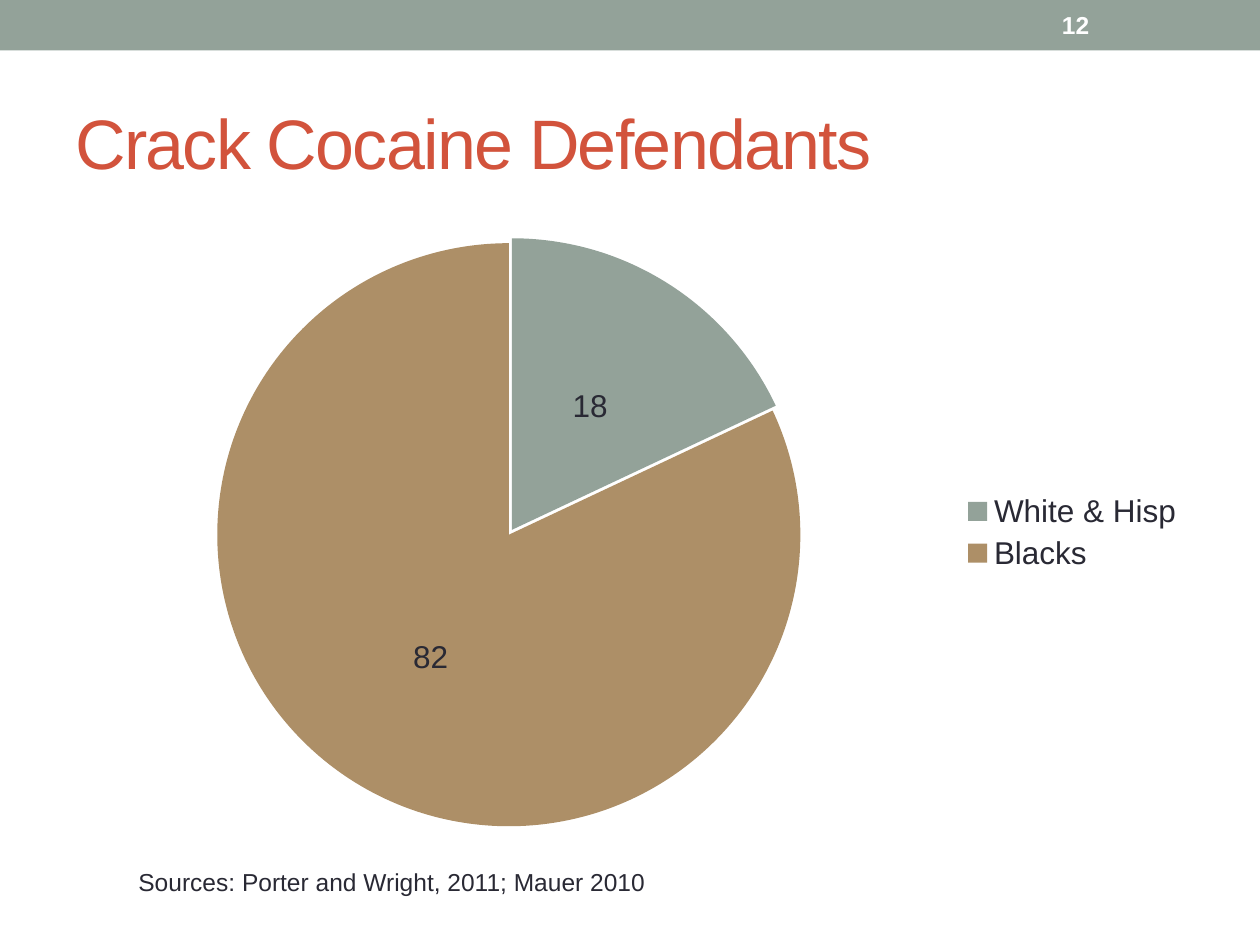
from pptx import Presentation
from pptx.chart.data import CategoryChartData
from pptx.dml.color import RGBColor
from pptx.enum.chart import XL_CHART_TYPE, XL_LABEL_POSITION, XL_LEGEND_POSITION
from pptx.enum.shapes import MSO_SHAPE
from pptx.enum.text import MSO_ANCHOR
from pptx.oxml import parse_xml
from pptx.oxml.ns import nsdecls
from pptx.util import Inches, Pt

PIE = XL_CHART_TYPE.PIE
CENTER = XL_LABEL_POSITION.CENTER
RIGHT = XL_LEGEND_POSITION.RIGHT
RECT = MSO_SHAPE.RECTANGLE
TOP, MIDDLE = MSO_ANCHOR.TOP, MSO_ANCHOR.MIDDLE

FONT = "Arial"
COLORS = {
    "sage": "93A299",
    "tan": "AD8F67",
    "title": "D2533C",
    "text": "292934",
    "white": "FFFFFF",
}
DEFENDANTS = [("White & Hisp", 18, "sage"), ("Blacks", 82, "tan")]


def rgb(name):
    """Return the named palette colour."""
    return RGBColor.from_string(COLORS[name])


def style_font(font, size, color, bold=False):
    """Set the face, size, colour and weight of a font."""
    font.name = FONT
    font.size = Pt(size)
    font.bold = bold
    font.color.rgb = rgb(color)


def add_text(slide, box, text, size, color, anchor=TOP, bold=False):
    """Add a wrapped one-line text box and return its run."""
    tf = slide.shapes.add_textbox(*map(Inches, box)).text_frame
    tf.word_wrap = True
    tf.vertical_anchor = anchor
    r = tf.paragraphs[0].add_run()
    r.text = text
    style_font(r.font, size, color, bold)
    return r


def add_header(slide, box, number):
    """Draw the top band with the slide number in it."""
    left, top, width, height = box
    sp = slide.shapes.add_shape(RECT, *map(Inches, box))
    sp.shadow.inherit = False
    sp.fill.solid()
    sp.fill.fore_color.rgb = rgb("sage")
    sp.line.fill.background()
    number_box = (left + 8.33, top + 0.02, 1.17, height - 0.04)
    add_text(slide, number_box, number, 14, "white", MIDDLE, True)


def add_title(slide, box, text):
    """Add the slide title with tightened letter spacing."""
    r = add_text(slide, box, text, 40, "title", MIDDLE)
    r.font._element.set("spc", "-100")


def add_pie(slide, box, rows):
    """Add the pie chart with slightly separated slices and a legend."""
    data = CategoryChartData()
    data.categories = [name for name, _, _ in rows]
    data.add_series("Series 1", [value for _, value, _ in rows])
    chart = slide.shapes.add_chart(PIE, *map(Inches, box), data).chart
    style_font(chart.font, 18, "text")
    chart.has_title = False
    chart.has_legend = True
    chart.legend.position = RIGHT
    chart.legend.include_in_layout = False

    plot = chart.plots[0]
    plot.vary_by_categories = True
    plot.has_data_labels = True
    labels = plot.data_labels
    labels.show_value = True
    labels.show_percentage = False
    labels.position = CENTER
    style_font(labels.font, 18, "text")

    series = plot.series[0]
    for i, (_, _, color) in enumerate(rows):
        fill = series.points[i].format.fill
        fill.solid()
        fill.fore_color.rgb = rgb(color)
    explosion = parse_xml(f'<c:explosion {nsdecls("c")} val="1"/>')
    series._element.find("{*}dPt").addprevious(explosion)


def main():
    """Build and save the slide."""
    prs = Presentation()
    prs.slide_width, prs.slide_height = Inches(10), Inches(7.5)
    slide = prs.slides.add_slide(prs.slide_layouts[6])
    add_header(slide, (0, 0, 10, 0.4), "12")
    add_title(slide, (0.5, 0.58, 9, 1.08), "Crack Cocaine Defendants")
    add_pie(slide, (0.5, 1.75, 9, 4.95), DEFENDANTS)
    add_text(slide, (1, 6.83, 8.25, 0.57),
             "Sources: Porter and Wright, 2011; Mauer 2010", 14, "text")
    prs.save("out.pptx")


if __name__ == "__main__":
    main()
